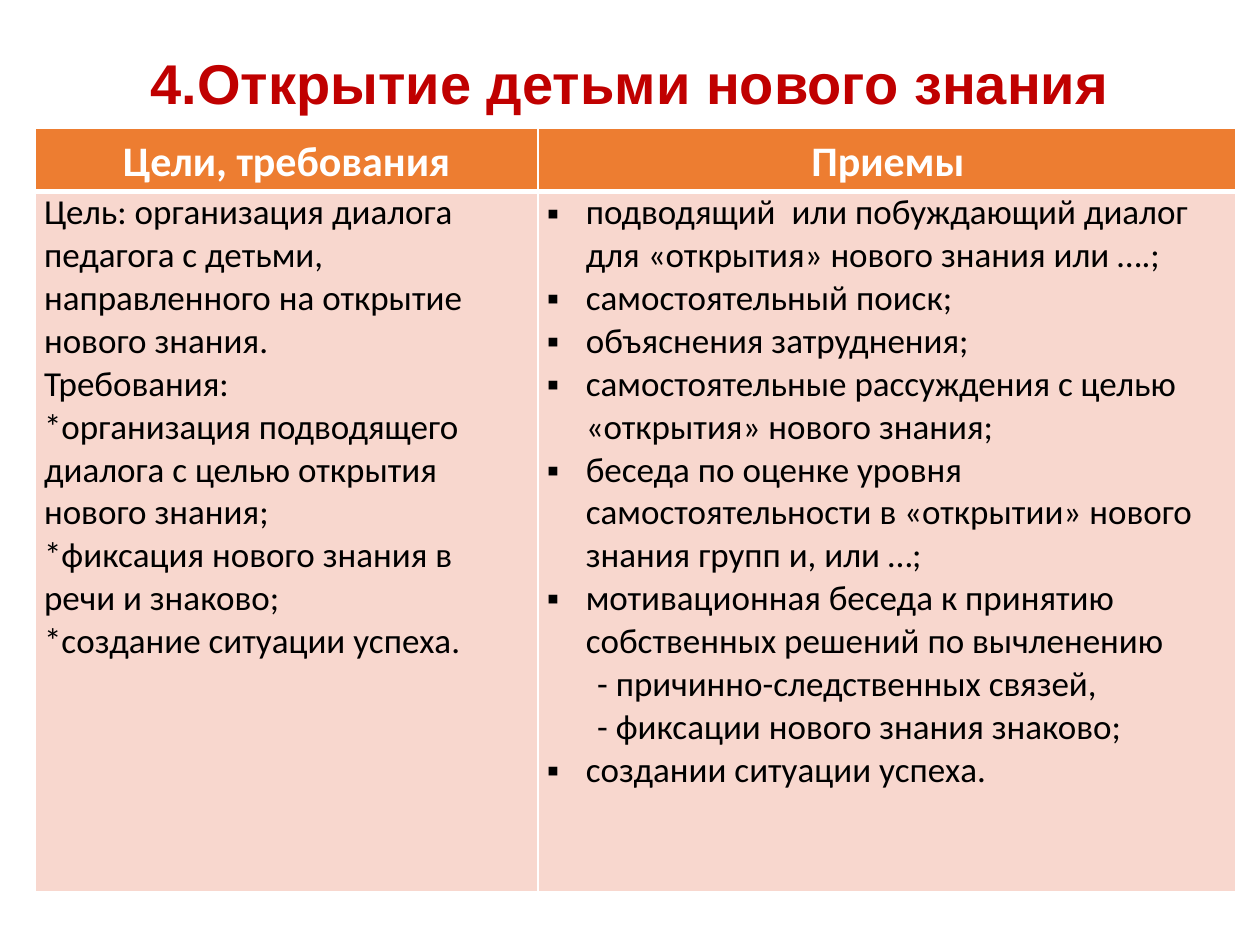
from dataclasses import dataclass

from lxml import etree
from pptx import Presentation
from pptx.dml.color import RGBColor
from pptx.enum.text import MSO_ANCHOR, PP_ALIGN
from pptx.oxml.ns import qn
from pptx.util import Inches, Pt

CENTER, LEFT = PP_ALIGN.CENTER, PP_ALIGN.LEFT
MIDDLE, TOP = MSO_ANCHOR.MIDDLE, MSO_ANCHOR.TOP
TITLE_ONLY = 5


@dataclass(frozen=True)
class Theme:
    """Colours, fonts and type sizes of the slide."""
    title: str = "C00000"
    header: str = "ED7D31"
    body: str = "F8D7CE"
    white: str = "FFFFFF"
    black: str = "000000"
    title_font: str = "Arial"
    table_font: str = "Calibri"
    title_size: int = 32
    header_size: int = 24
    body_size: int = 20


THEME = Theme()
TITLE = "4.Открытие детьми нового знания"
HEADERS = ["Цели, требования", "Приемы "]
GOALS = [
    "Цель: организация диалога педагога с детьми, направленного на открытие нового знания.",
    "Требования:",
    "*организация подводящего диалога с целью открытия нового знания;",
    "*фиксация нового знания в речи и знаково;",
    "*создание ситуации успеха.",
]
METHODS = [
    "подводящий  или побуждающий диалог для «открытия» нового знания или ….;",
    "самостоятельный поиск;",
    "объяснения затруднения;",
    "самостоятельные рассуждения с целью «открытия» нового знания;",
    "беседа по оценке уровня самостоятельности в «открытии» нового знания групп и, или …;",
    "мотивационная беседа к принятию собственных решений по вычленению",
    "- причинно-следственных связей,",
    "- фиксации нового знания знаково;",
    "создании ситуации успеха.",
]


def write(p, text, *, size, color, font, bold=False, align=LEFT, spacing=1.0,
          margin=0, indent=0, bullet=None):
    """Write one formatted paragraph."""
    pPr = p._p.get_or_add_pPr()
    pPr.set("marL", str(Inches(margin)))
    pPr.set("indent", str(Inches(indent)))
    p.alignment, p.line_spacing = align, spacing
    if bullet:
        etree.SubElement(pPr, qn("a:buFont")).set("typeface", THEME.title_font)
        etree.SubElement(pPr, qn("a:buChar")).set("char", bullet)
    r = p.add_run()
    r.text = text
    r.font.name, r.font.size, r.font.bold = font, Pt(size), bold
    r.font.color.rgb = RGBColor.from_string(color)


def style_cell(cell, fill, top=1, bottom=1):
    """Set the margins, borders and fill of a cell."""
    cell.margin_left = cell.margin_right = Inches(0.07)
    cell.margin_top = cell.margin_bottom = 0
    cell.vertical_anchor = TOP
    tcPr = cell._tc.get_or_add_tcPr()
    for side, width in (("L", 1), ("R", 1), ("T", top), ("B", bottom)):
        ln = etree.SubElement(tcPr, qn(f"a:ln{side}"), w=str(Pt(width)))
        solid = etree.SubElement(ln, qn("a:solidFill"))
        etree.SubElement(solid, qn("a:srgbClr"), val=THEME.white)
    cell.fill.solid()
    cell.fill.fore_color.rgb = RGBColor.from_string(fill)


def fill_body(cell, items, bullet=None):
    """Write body paragraphs, bulleting all but the dashed ones if asked."""
    tf = cell.text_frame
    for i, text in enumerate(items):
        p = tf.add_paragraph() if i else tf.paragraphs[0]
        layout = {}
        if bullet and text.startswith("-"):
            layout = {"indent": 0.4}
        elif bullet:
            layout = {"margin": 0.31, "indent": -0.31, "bullet": bullet}
        write(p, text, size=THEME.body_size, color=THEME.black,
              font=THEME.table_font, **layout)


def place_title(slide, left, top, width, height):
    """Place the title in its box."""
    sp = slide.shapes.title
    sp.left, sp.top, sp.width, sp.height = map(Inches, (left, top, width, height))
    tf = sp.text_frame
    tf.word_wrap, tf.vertical_anchor = True, MIDDLE
    write(tf.paragraphs[0], TITLE, size=THEME.title_size, color=THEME.title,
          font=THEME.title_font, bold=True, align=CENTER, spacing=0.9)


def place_table(slide, left, top, width, height):
    """Place the table of goals and methods in its box."""
    box = map(Inches, (left, top, width, height))
    table = slide.shapes.add_table(2, 2, *box).table
    table.horz_banding = False
    first_col, header_row = 3.99, 0.5
    for col, size in zip(table.columns, (first_col, width - first_col)):
        col.width = Inches(size)
    for row, size in zip(table.rows, (header_row, height - header_row)):
        row.height = Inches(size)
    for i, (text, margin) in enumerate(zip(HEADERS, (0, 0.09))):
        style_cell(table.cell(0, i), THEME.header, bottom=3)
        style_cell(table.cell(1, i), THEME.body, top=3)
        write(table.cell(0, i).text_frame.paragraphs[0], text,
              size=THEME.header_size, color=THEME.white, font=THEME.table_font,
              bold=True, align=CENTER, spacing=1.15, margin=margin)
    fill_body(table.cell(1, 0), GOALS)
    fill_body(table.cell(1, 1), METHODS, bullet="▪")


def main():
    """Build and save the slide."""
    prs = Presentation()
    prs.slide_width, prs.slide_height = Inches(10), Inches(7.5)
    slide = prs.slides.add_slide(prs.slide_layouts[TITLE_ONLY])
    place_title(slide, 0.5, 0.3, 9, 0.77)
    place_table(slide, 0.28, 1.02, 9.53, 6.06)
    prs.save("out.pptx")


if __name__ == "__main__":
    main()
